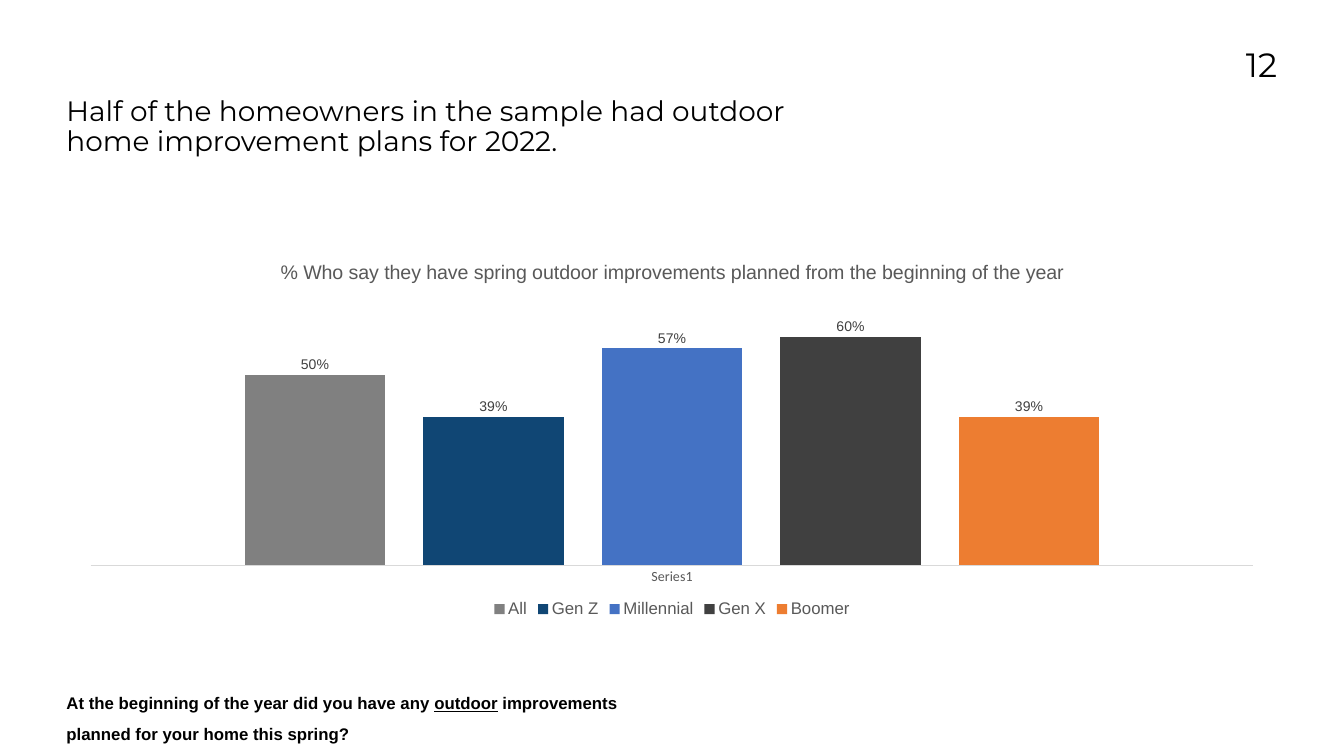
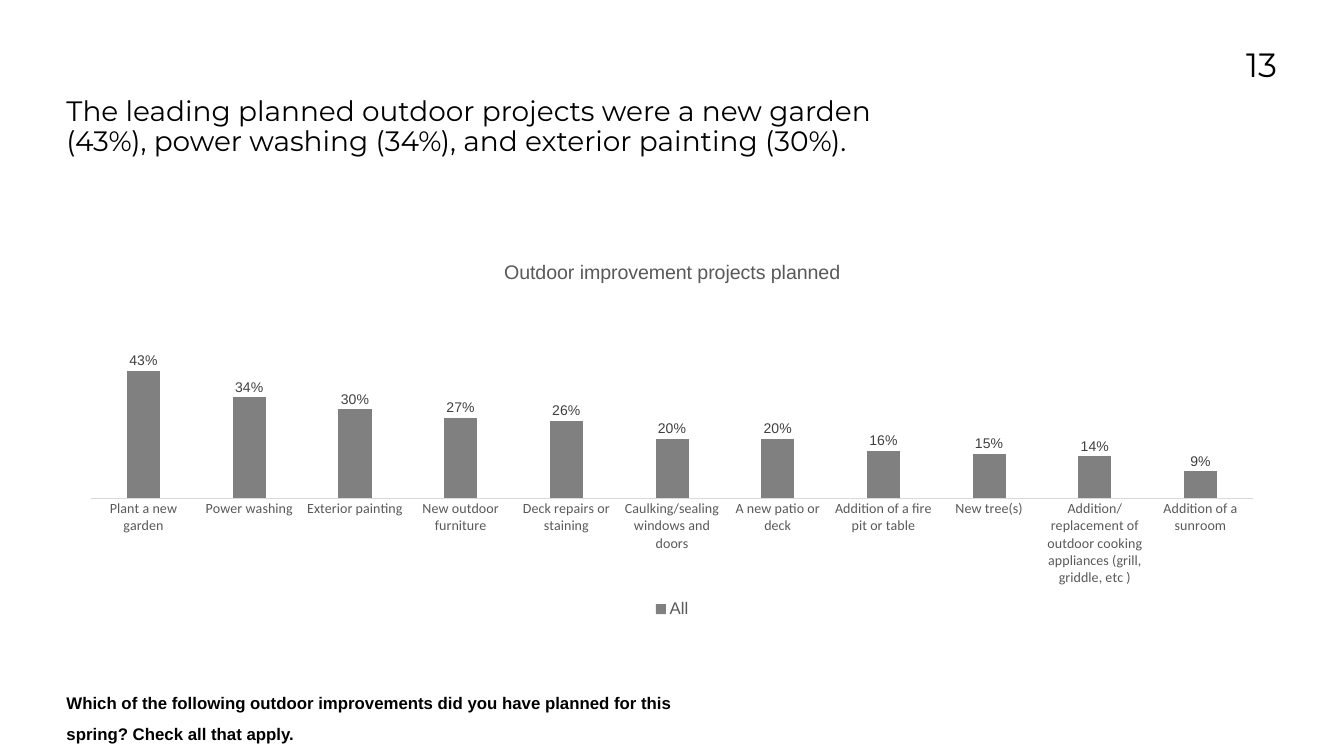
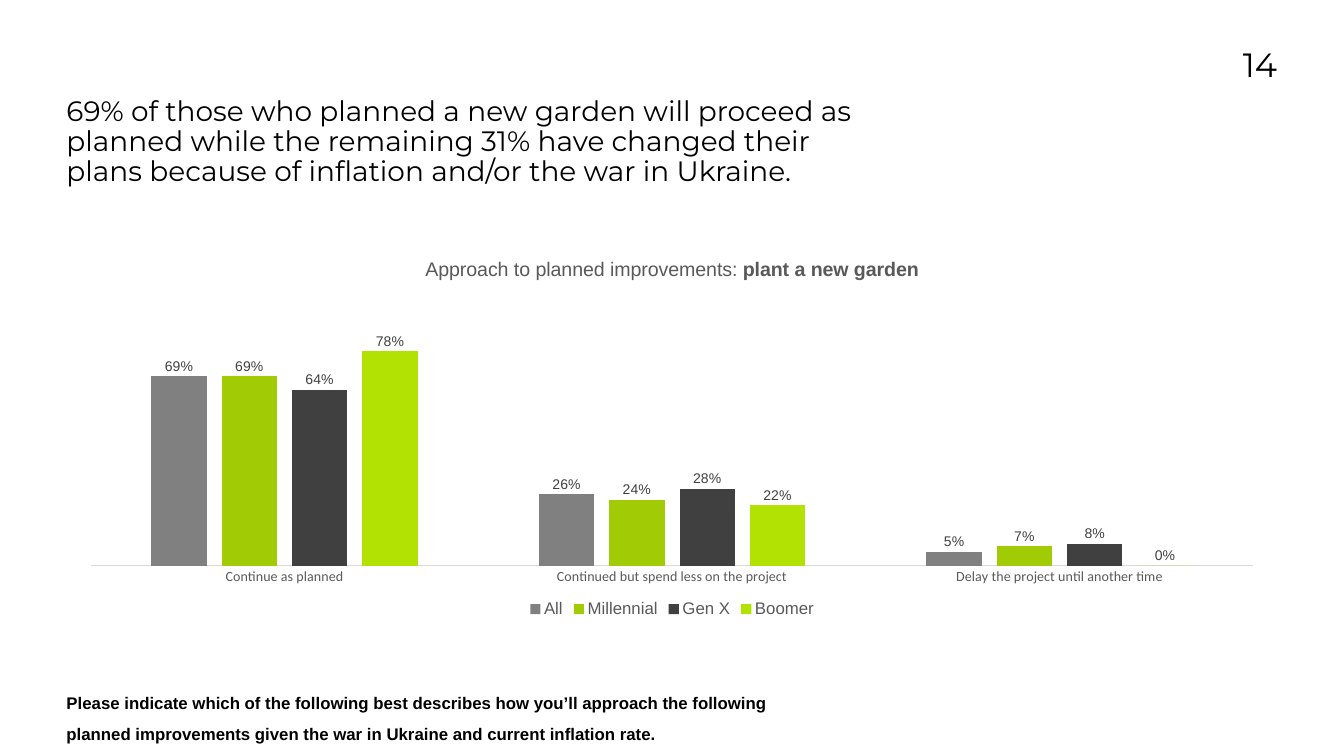
from pptx import Presentation
from pptx.chart.data import CategoryChartData
from pptx.dml.color import RGBColor
from pptx.enum.chart import XL_CHART_TYPE, XL_LABEL_POSITION, XL_LEGEND_POSITION, XL_TICK_MARK
from pptx.enum.text import MSO_ANCHOR, MSO_AUTO_SIZE, PP_ALIGN
from pptx.oxml import parse_xml
from pptx.oxml.ns import nsdecls, qn
from pptx.util import Pt
from lxml.etree import SubElement

BLACK = RGBColor(0x00, 0x00, 0x00)
CHARCOAL = RGBColor(0x40, 0x40, 0x40)
SLATE = RGBColor(0x59, 0x59, 0x59)
GRAY = RGBColor(0x80, 0x80, 0x80)
PALE_GRAY = RGBColor(0xD9, 0xD9, 0xD9)
NAVY = RGBColor(0x10, 0x46, 0x74)
BLUE = RGBColor(0x44, 0x72, 0xC4)
ORANGE = RGBColor(0xED, 0x7D, 0x31)
GREEN = RGBColor(0xA0, 0xCB, 0x05)
LIME = RGBColor(0xB2, 0xE2, 0x03)

HEADING_FONT = "Montserrat"
BODY_FONT = "Arial"
AXIS_FONT = "Calibri"

FIRST_NUMBER = 12
LEFT = 95
NUMBER_AREA = (1662.5, 63.4, 162, 118)
TITLE_AREA = (LEFT, 139, 1152.7, 149.8)
CHART_AREA = (LEFT, 351.4, 1730.2, 537.1)
QUESTION_TOP, QUESTION_HEIGHT = 975.6, 46.8

SLIDES = [
    {
        "title": "Half of the homeowners in the sample had outdoor home improvement plans for 2022.",
        "chart_title": [
            ("% Who say they have spring outdoor improvements planned from the beginning of the year", False),
        ],
        "categories": ["Series1"],
        "series": [
            ("All", GRAY, [0.5]),
            ("Gen Z", NAVY, [0.39]),
            ("Millennial", BLUE, [0.57]),
            ("Gen X", CHARCOAL, [0.6]),
            ("Boomer", ORANGE, [0.39]),
        ],
        "maximum": 0.7,
        "plot": (0.14, 0.71),
        "question": [
            ("At the beginning of the year did you have any ", False),
            ("outdoor", True),
            (" improvements planned for your home this spring?", False),
        ],
        "question_width": 864.7,
    },
    {
        "title": "The leading planned outdoor projects were a new garden (43%), "
                 "power washing (34%), and exterior painting (30%).",
        "chart_title": [("Outdoor improvement projects planned", False)],
        "categories": [
            "Plant a new garden",
            "Power washing",
            "Exterior painting",
            "New outdoor furniture",
            "Deck repairs or staining",
            "Caulking/sealing windows and doors",
            "A new patio or deck",
            "Addition of a fire pit or table",
            "New tree(s)",
            "Addition/replacement of outdoor cooking appliances (grill, griddle, etc )",
            "Addition of a sunroom",
        ],
        "series": [
            ("All", GRAY, [0.43, 0.34, 0.3, 0.27, 0.26, 0.2, 0.2, 0.16, 0.15, 0.14, 0.09]),
        ],
        "maximum": 0.7,
        "plot": (0.12, 0.55),
        "question": [
            ("Which of the following outdoor improvements did you have planned "
             "for this spring? Check all that apply.", False),
        ],
        "question_width": 864.7,
    },
    {
        "title": "69% of those who planned a new garden will proceed as planned while the remaining 31% "
                 "have changed their plans because of inflation and/or the war in Ukraine.",
        "chart_title": [("Approach to planned improvements: ", False), ("plant a new garden", True)],
        "categories": [
            "Continue as planned",
            "Continued but spend less on the project",
            "Delay the project until another time",
        ],
        "series": [
            ("All", GRAY, [0.69, 0.26, 0.05]),
            ("Millennial", GREEN, [0.69, 0.24, 0.07]),
            ("Gen X", CHARCOAL, [0.64, 0.28, 0.08]),
            ("Boomer", LIME, [0.78, 0.22, 0]),
        ],
        "maximum": 1,
        "plot": (0.12, 0.73),
        "question": [
            ("Please indicate which of the following best describes how you’ll approach the following "
             "planned improvements given the war in Ukraine and current inflation rate.", False),
        ],
        "question_width": 1045.4,
    },
]


def set_font(font, name, size, color, bold=False):
    font.name = name
    font.size = Pt(size)
    font.bold = bold
    font.color.rgb = color


def prepare_box(box, area):
    box.left, box.top, box.width, box.height = map(Pt, area)
    frame = box.text_frame
    frame.word_wrap = True
    frame.auto_size = MSO_AUTO_SIZE.NONE
    frame.vertical_anchor = MSO_ANCHOR.TOP
    frame.margin_left = frame.margin_top = frame.margin_right = frame.margin_bottom = 0
    return frame.paragraphs[0]


def add_number(page, number):
    para = prepare_box(page.shapes.add_textbox(0, 0, 0, 0), NUMBER_AREA)
    para.text = str(number)
    para.alignment = PP_ALIGN.RIGHT
    set_font(para.font, HEADING_FONT, 48, BLACK)


def fill_title(page, text):
    para = prepare_box(page.shapes.title, TITLE_AREA)
    para.text = text
    para.alignment = PP_ALIGN.LEFT
    para.line_spacing = 0.9
    set_font(para.font, HEADING_FONT, 40, BLACK)


def fill_question(page, spans, width):
    para = prepare_box(page.placeholders[1], (LEFT, QUESTION_TOP, width, QUESTION_HEIGHT))
    properties = para._p.get_or_add_pPr()
    properties.set("marL", "0")
    properties.set("indent", "0")
    SubElement(properties, qn("a:buNone"))
    para.line_spacing = 1.5
    para.space_before = Pt(0)
    set_font(para.font, BODY_FONT, 24, BLACK, True)
    for text, underlined in spans:
        span = para.add_run()
        span.text = text
        if underlined:
            span.font.underline = True


def place_plot(chart, top, height):
    plot_area = chart._chartSpace.chart.plotArea
    for layout in plot_area.findall(qn("c:layout")):
        plot_area.remove(layout)
    plot_area.insert(0, parse_xml(
        f'<c:layout {nsdecls("c")}><c:manualLayout><c:layoutTarget val="inner"/>'
        '<c:xMode val="edge"/><c:yMode val="edge"/>'
        f'<c:x val="0.02"/><c:y val="{top}"/><c:w val="0.96"/><c:h val="{height}"/>'
        '</c:manualLayout></c:layout>'))


def add_column_chart(page, content):
    data = CategoryChartData(number_format="0%")
    data.categories = content["categories"]
    for name, _, values in content["series"]:
        data.add_series(name, values)
    chart = page.shapes.add_chart(XL_CHART_TYPE.COLUMN_CLUSTERED, *map(Pt, CHART_AREA), data).chart
    set_font(chart.font, AXIS_FONT, 10, BLACK)

    chart.has_title = True
    heading = chart.chart_title.text_frame.paragraphs[0]
    for text, bold in content["chart_title"]:
        span = heading.add_run()
        span.text = text
        set_font(span.font, BODY_FONT, 28, SLATE, bold)
    chart.chart_title.include_in_layout = False

    chart.has_legend = True
    chart.legend.position = XL_LEGEND_POSITION.BOTTOM
    chart.legend.include_in_layout = False
    set_font(chart.legend.font, BODY_FONT, 24, SLATE)

    category_axis = chart.category_axis
    category_axis.major_tick_mark = XL_TICK_MARK.NONE
    category_axis.format.line.color.rgb = PALE_GRAY
    category_axis.format.line.width = Pt(0.75)
    set_font(category_axis.tick_labels.font, AXIS_FONT, 20, SLATE)
    value_axis = chart.value_axis
    value_axis.visible = False
    value_axis.has_major_gridlines = False
    value_axis.minimum_scale = 0
    value_axis.maximum_scale = content["maximum"]

    plot = chart.plots[0]
    plot.gap_width = 219
    plot.overlap = -27
    plot.vary_by_categories = False
    for series, (_, color, _) in zip(plot.series, content["series"]):
        series.format.fill.solid()
        series.format.fill.fore_color.rgb = color
        series.invert_if_negative = False
        labels = series.data_labels
        labels.show_value = True
        labels.position = XL_LABEL_POSITION.OUTSIDE_END
        labels.number_format = "0%"
        labels.number_format_is_linked = False
        set_font(labels.font, BODY_FONT, 20, CHARCOAL)
    place_plot(chart, *content["plot"])


def main():
    deck = Presentation()
    deck.slide_width, deck.slide_height = Pt(1920), Pt(1080)
    for number, content in enumerate(SLIDES, FIRST_NUMBER):
        page = deck.slides.add_slide(deck.slide_layouts[1])
        add_number(page, number)
        add_column_chart(page, content)
        fill_title(page, content["title"])
        fill_question(page, content["question"], content["question_width"])
    deck.save("out.pptx")


if __name__ == "__main__":
    main()
